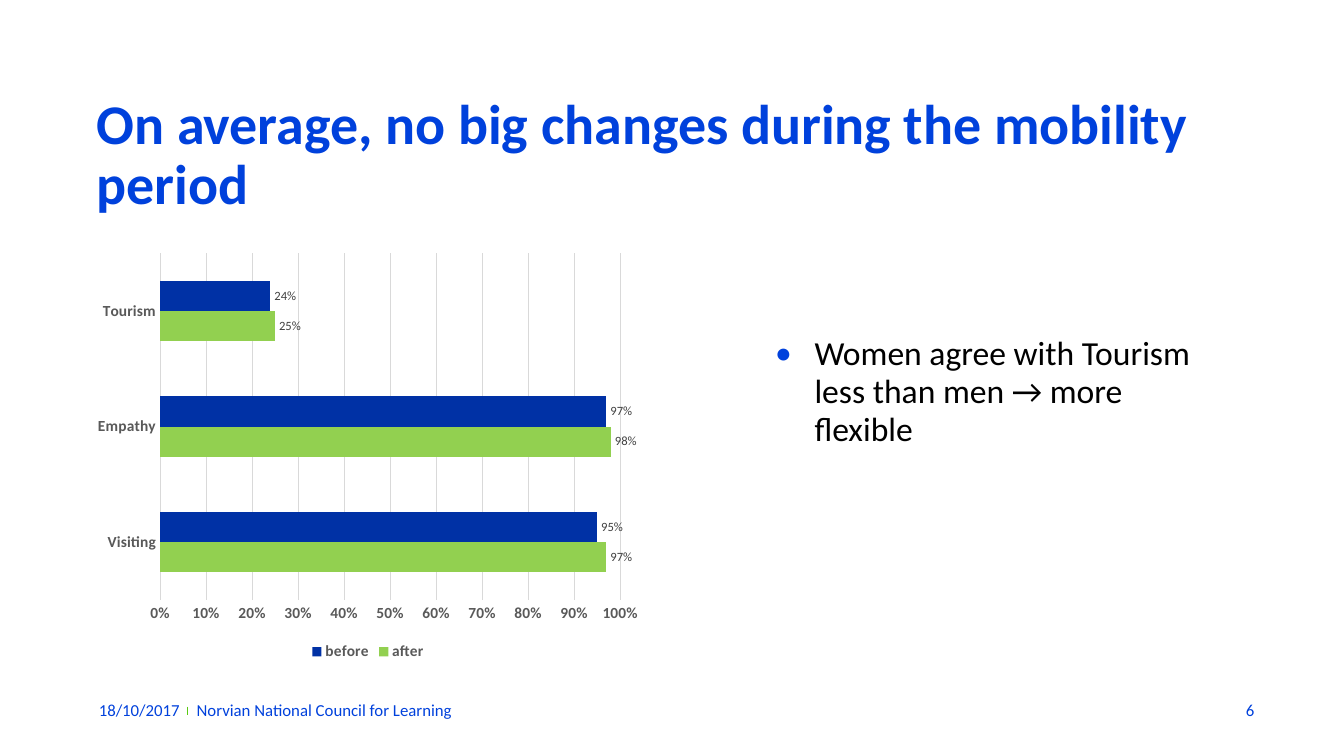
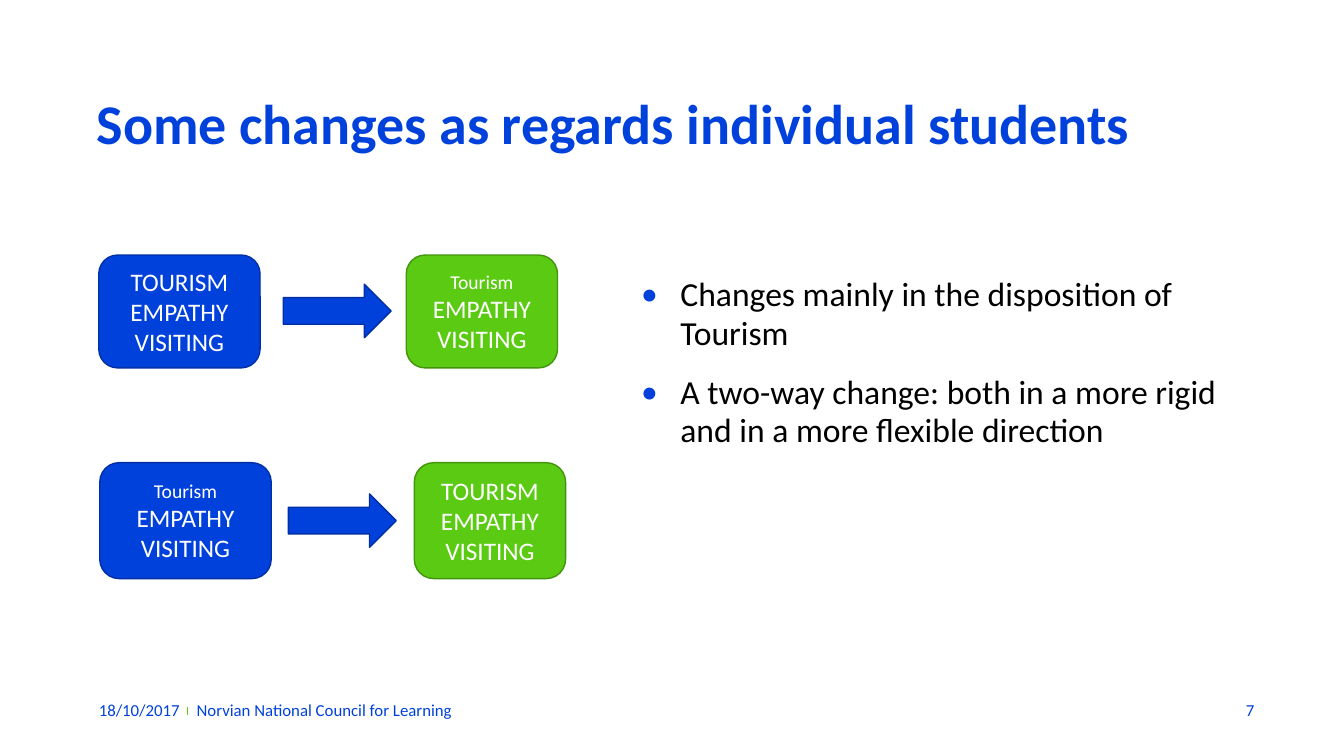
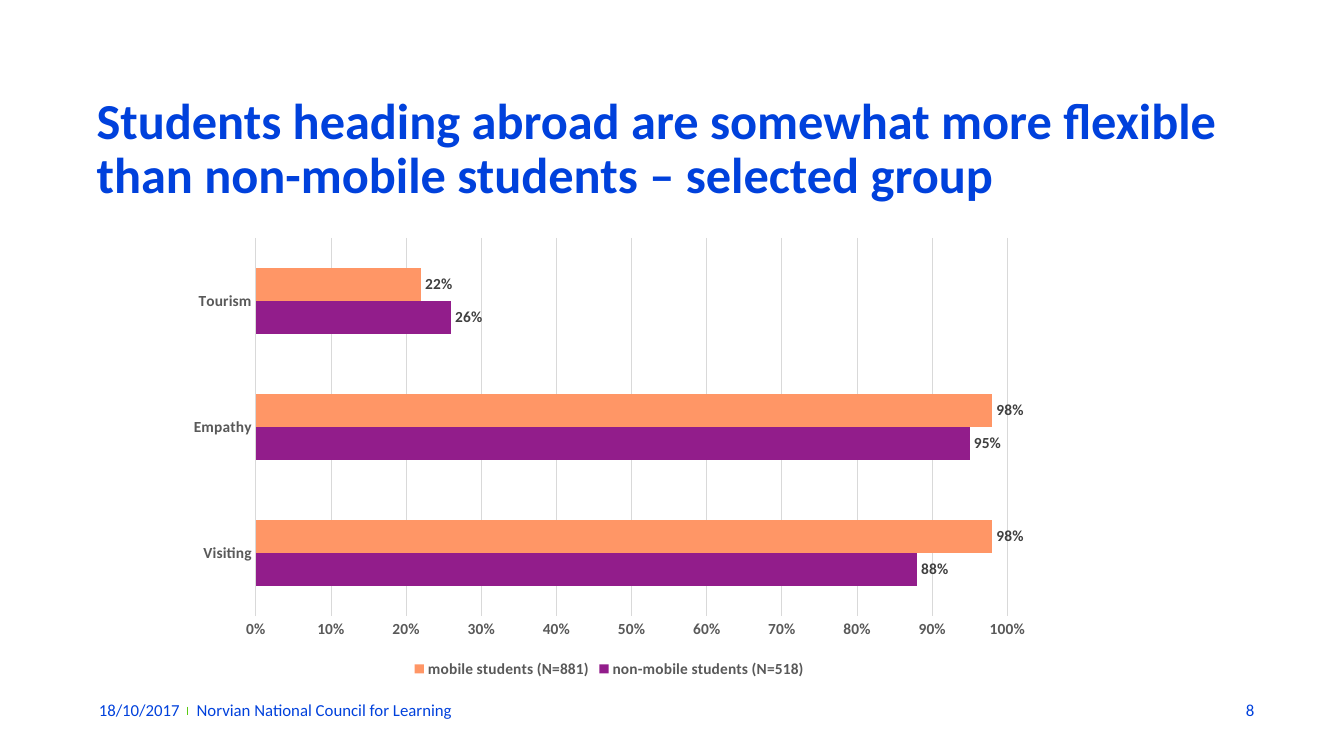
from dataclasses import dataclass
from typing import Any, NamedTuple

from lxml.etree import SubElement as Sub
from pptx import Presentation
from pptx.chart.data import CategoryChartData as Data
from pptx.dml.color import RGBColor as Rgb
from pptx.enum.chart import XL_CHART_TYPE as Kind
from pptx.enum.chart import XL_LABEL_POSITION as Spot
from pptx.enum.chart import XL_LEGEND_POSITION as Side
from pptx.enum.chart import XL_TICK_MARK as Tick
from pptx.enum.shapes import MSO_CONNECTOR as Link
from pptx.enum.shapes import MSO_SHAPE as Form
from pptx.enum.text import MSO_ANCHOR as Anchor
from pptx.enum.text import PP_ALIGN as Align
from pptx.oxml.ns import qn
from pptx.slide import Slide
from pptx.util import Emu, Pt

SCALE = 9144


@dataclass(frozen=True)
class Theme:
    face: str = "Calibri"
    blue: str = "0041DC"
    navy: str = "0030A3"
    green: str = "5BCA13"
    moss: str = "43950E"
    black: str = "000000"
    white: str = "FFFFFF"
    gray: str = "595959"
    dark: str = "404040"
    pale: str = "D9D9D9"
    deep: str = "0031A5"
    lime: str = "92D050"
    plum: str = "921D8B"
    peach: str = "FF9666"
    title: int = 40
    long: int = 36
    body: int = 24
    large: int = 18
    small: int = 14
    foot: int = 12
    axis: int = 11
    chart: int = 10
    tiny: int = 9


THEME = Theme()


class Box(NamedTuple):
    left: int
    top: int
    width: int
    height: int


class Style(NamedTuple):
    size: int
    color: str
    bold: bool = False


class Line(NamedTuple):
    text: str
    style: Style


class Node(NamedTuple):
    box: Box
    fill: str
    edge: str
    lines: list[Line]


class Arrow(NamedTuple):
    left: int
    top: int


class Series(NamedTuple):
    name: str
    values: tuple[float, ...]
    color: str


class Graph(NamedTuple):
    box: Box
    label: Style
    series: list[Series]


AXIS = Style(THEME.axis, THEME.gray, True)
FOOT = Style(THEME.foot, THEME.blue)
BODY = Style(THEME.body, THEME.black)
LARGE = Style(THEME.large, THEME.white)
SMALL = Style(THEME.small, THEME.white)

FLAT = dict(margin_left=0, margin_top=0, margin_right=0, margin_bottom=0,
            vertical_anchor=Anchor.MIDDLE)
HEAD = dict(line_spacing=0.9)
LIST = dict(line_spacing=0.95, space_after=Pt(15))
MID = dict(alignment=Align.CENTER)
RIGHT = dict(alignment=Align.RIGHT)

HIGH = [Line("TOURISM", LARGE), Line("EMPATHY", LARGE), Line("VISITING", LARGE)]
LOW = [Line("Tourism", SMALL)] + HIGH[1:]
GROUPS = ("Visiting", "Empathy", "Tourism")


def px(count: int) -> Emu:
    return Emu(count * SCALE)


def place(box: Box) -> tuple[Emu, ...]:
    return tuple(px(side) for side in box)


def apply(item: Any, values: dict[str, Any]) -> None:
    for key, value in values.items():
        setattr(item, key, value)


def ink(font: Any, style: Style) -> None:
    apply(font, dict(name=THEME.face, size=Pt(style.size), bold=style.bold))
    font.color.rgb = Rgb.from_string(style.color)


def paint(fill: Any, color: str) -> None:
    fill.solid()
    fill.fore_color.rgb = Rgb.from_string(color)


def stroke(line: Any, color: str, width: float) -> None:
    paint(line.fill, color)
    line.width = Pt(width)


def write(frame: Any, lines: list[Line], form: dict[str, Any]) -> None:
    for at, line in enumerate(lines):
        para = frame.add_paragraph() if at else frame.paragraphs[0]
        apply(para, form)
        run = para.add_run()
        run.text = line.text
        ink(run.font, line.style)


def add_text(slide: Slide, box: Box, lines: list[Line],
             form: dict[str, Any], inset: dict[str, Any]) -> Any:
    frame = slide.shapes.add_textbox(*place(box)).text_frame
    apply(frame, dict(word_wrap=True) | inset)
    write(frame, lines, form)
    return frame


def add_list(slide: Slide, box: Box, items: list[str]) -> None:
    frame = add_text(slide, box, [Line(item, BODY) for item in items], LIST, {})
    for para in frame.paragraphs:
        prop = para._p.get_or_add_pPr()
        prop.set("marL", str(px(39)))
        prop.set("indent", str(-px(39)))
        Sub(Sub(prop, qn("a:buClr")), qn("a:srgbClr"), val=THEME.blue)
        Sub(prop, qn("a:buFont"), typeface=THEME.face)
        Sub(prop, qn("a:buChar"), char="•")


def add_shape(slide: Slide, form: Form, box: Box, fill: str, edge: str) -> Any:
    shape = slide.shapes.add_shape(form, *place(box))
    shape.shadow.inherit = False
    paint(shape.fill, fill)
    stroke(shape.line, edge, 1)
    return shape


def add_node(slide: Slide, node: Node) -> None:
    shape = add_shape(slide, Form.ROUNDED_RECTANGLE, node.box, node.fill, node.edge)
    apply(shape.text_frame, dict(word_wrap=True, vertical_anchor=Anchor.MIDDLE))
    write(shape.text_frame, node.lines, MID)


def add_arrow(slide: Slide, arrow: Arrow) -> None:
    box = Box(arrow.left, arrow.top, 107, 53)
    add_shape(slide, Form.RIGHT_ARROW, box, THEME.blue, THEME.navy)


def add_graph(slide: Slide, graph: Graph) -> None:
    data = Data(number_format="0%")
    data.categories = GROUPS
    for item in graph.series:
        data.add_series(item.name, item.values)
    chart = slide.shapes.add_chart(Kind.BAR_CLUSTERED, *place(graph.box), data).chart
    ink(chart.font, Style(THEME.chart, THEME.black))
    apply(chart, dict(has_title=False, has_legend=True))
    apply(chart.legend, dict(position=Side.BOTTOM, include_in_layout=False))
    ink(chart.legend.font, AXIS)

    for axis in (chart.category_axis, chart.value_axis):
        apply(axis, dict(major_tick_mark=Tick.NONE, minor_tick_mark=Tick.NONE))
        ink(axis.tick_labels.font, AXIS)
    stroke(chart.category_axis.format.line, THEME.pale, 0.75)
    value = chart.value_axis
    apply(value, dict(minimum_scale=0, maximum_scale=1, major_unit=0.1,
                      has_major_gridlines=True))
    value.format.line.fill.background()
    stroke(value.major_gridlines.format.line, THEME.pale, 0.75)
    number = dict(number_format="0%", number_format_is_linked=False)
    apply(value.tick_labels, number)

    plot = chart.plots[0]
    apply(plot, dict(gap_width=182, overlap=0, vary_by_categories=False))
    for bars, item in zip(plot.series, graph.series):
        paint(bars.format.fill, item.color)
        bars.invert_if_negative = False
        labels = bars.data_labels
        apply(labels, number | dict(show_value=True, position=Spot.OUTSIDE_END))
        ink(labels.font, graph.label)


def add_page(deck: Any, number: int, title: str, size: int = THEME.title) -> Slide:
    slide = deck.slides.add_slide(deck.slide_layouts[6])
    mark = slide.shapes.add_connector(
        Link.STRAIGHT, px(186), px(701), px(186), px(709))
    stroke(mark.line, THEME.green, 1.25)
    Sub(mark._element.spPr, qn("a:effectLst"))
    add_text(slide, Box(86, 90, 1150, 125),
             [Line(title, Style(size, THEME.blue, True))], HEAD, {})
    for left, width, text, form in (
        (98, 97, "18/10/2017", {}),
        (195, 473, "Norvian National Council for Learning", {}),
        (1154, 90, str(number), RIGHT),
    ):
        add_text(slide, Box(left, 690, width, 29), [Line(text, FOOT)], form, FLAT)
    return slide


def main() -> None:
    deck = Presentation()
    apply(deck, dict(slide_width=px(1333), slide_height=px(750)))

    slide = add_page(deck, 6, "On average, no big changes during the mobility period")
    add_list(slide, Box(759, 327, 463, 138),
             ["Women agree with Tourism less than men → more flexible"])
    add_graph(slide, Graph(Box(86, 243, 558, 417), Style(THEME.tiny, THEME.dark), [
        Series("after", (0.97, 0.98, 0.25), THEME.lime),
        Series("before", (0.95, 0.97, 0.24), THEME.deep),
    ]))

    slide = add_page(deck, 7, "Some changes as regards individual students")
    add_list(slide, Box(626, 269, 618, 202), [
        "Changes mainly in the disposition of Tourism",
        "A two-way change: both in a more rigid and in a more flexible direction",
    ])
    for node in (
        Node(Box(98, 253, 160, 112), THEME.blue, THEME.navy, HIGH),
        Node(Box(403, 253, 150, 112), THEME.green, THEME.moss, LOW),
        Node(Box(99, 459, 170, 115), THEME.blue, THEME.navy, LOW),
        Node(Box(411, 459, 150, 115), THEME.green, THEME.moss, HIGH),
    ):
        add_node(slide, node)
    for arrow in (Arrow(281, 282), Arrow(286, 490)):
        add_arrow(slide, arrow)

    slide = add_page(
        deck, 8,
        "Students heading abroad are somewhat more flexible "
        "than non-mobile students – selected group", THEME.long)
    add_graph(slide, Graph(Box(175, 227, 859, 450), Style(THEME.axis, THEME.dark, True), [
        Series("non-mobile students (N=518)", (0.88, 0.95, 0.26), THEME.plum),
        Series("mobile students (N=881)", (0.98, 0.98, 0.22), THEME.peach),
    ]))

    deck.save("out.pptx")


if __name__ == "__main__":
    main()
